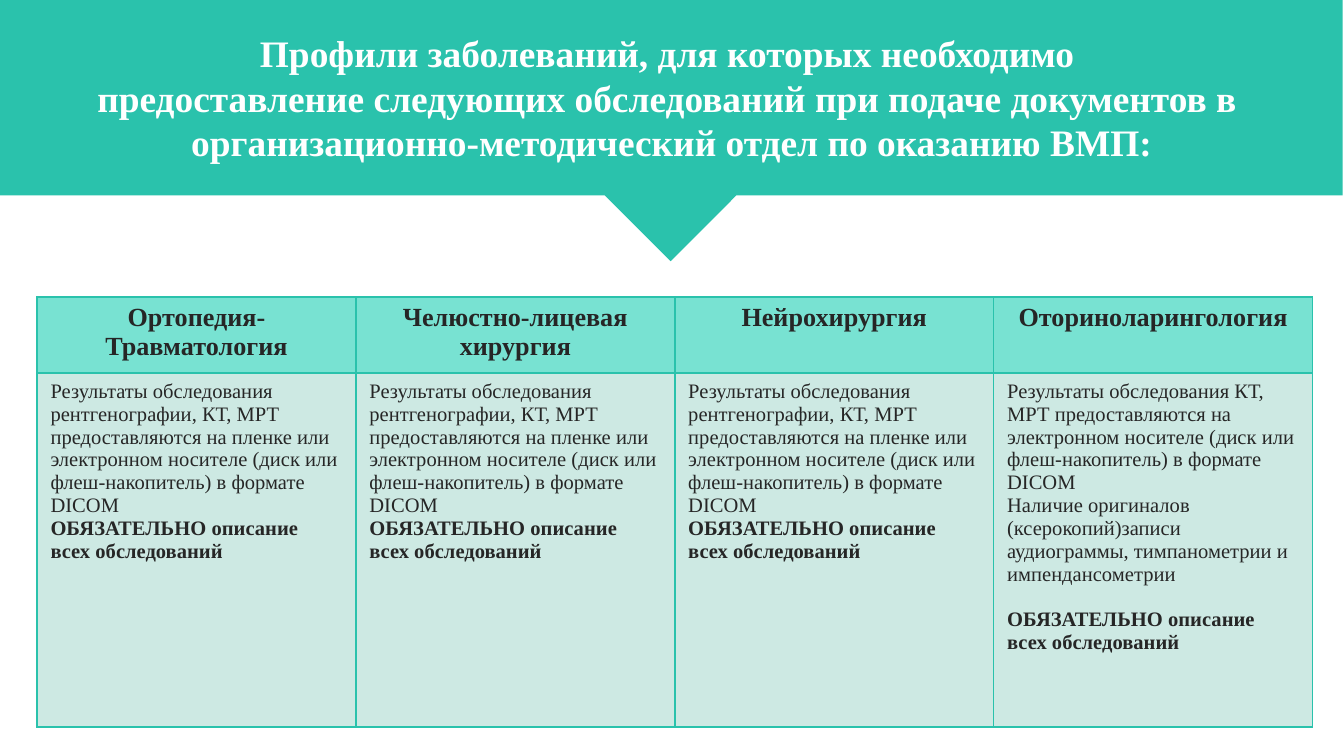
from dataclasses import dataclass
from copy import deepcopy

from lxml import etree
from pptx import Presentation
from pptx import util as u
from pptx.dml.color import RGBColor
from pptx.enum import shapes, text
from pptx.oxml.ns import qn

WIDTH = 10
HEIGHT = WIDTH * 9 / 16
FONT = "Times New Roman"
TEAL, MINT, PALE, DARK, WHITE = "2AC2AC", "78E2D2", "CDE9E3", "262626", "FFFFFF"
ROW_PERCENTS = (10.1, 46.8)

TITLE_LINES = (
    "Профили заболеваний, для которых необходимо ",
    "предоставление следующих обследований при подаче документов в ",
    "организационно-методический отдел по оказанию ВМП:",
)
IMAGING = (
    "Результаты обследования рентгенографии, КТ, МРТ предоставляются на пленке "
    "или электронном носителе (диск или флеш-накопитель) в формате DICOM"
)
ENT_IMAGING = (
    "Результаты обследования КТ, МРТ предоставляются на электронном носителе "
    "(диск или флеш-накопитель) в формате DICOM"
)
ENT_RECORDS = (
    "Наличие оригиналов (ксерокопий)записи аудиограммы, тимпанометрии "
    "и импендансометрии"
)
REQUIRED = "ОБЯЗАТЕЛЬНО описание всех обследований"


@dataclass(frozen=True)
class Profile:
    name: str
    examinations: tuple[str, ...] = (IMAGING,)
    gap: float = 0


PROFILES = (
    Profile("Ортопедия-Травматология"),
    Profile("Челюстно-лицевая хирургия"),
    Profile("Нейрохирургия"),
    Profile("Оториноларингология", (ENT_IMAGING, ENT_RECORDS), 12.2),
)


def color(value: str) -> RGBColor:
    return RGBColor.from_string(value)


def across(percent: float) -> int:
    return u.Inches(WIDTH * percent / 100)


def down(percent: float) -> int:
    return u.Inches(HEIGHT * percent / 100)


def assign(target, values: dict) -> None:
    for name, value in values.items():
        setattr(target, name, value)


def format_font(run, size: float, bold: bool, fill: str) -> None:
    assign(run.font, {"name": FONT, "size": u.Pt(size), "bold": bold})
    run.font.color.rgb = color(fill)


def draw_banner(slide):
    banner = slide.shapes.add_shape(
        shapes.MSO_SHAPE.DOWN_ARROW_CALLOUT,
        across(-0.1), down(-0.3), across(100), down(34.85),
    )
    banner.shadow.inherit = False
    banner.fill.solid()
    banner.fill.fore_color.rgb = color(TEAL)
    banner.line.fill.background()
    for index, value in enumerate((0.21, 0.25, 0.25, 0.75)):
        banner.adjustments[index] = value
    return banner


def draw_title(slide, banner) -> None:
    title = slide.shapes.title
    banner.element.addnext(title.element)
    assign(title, {"left": across(0.1), "top": down(8.75),
                   "width": across(99.8), "height": down(8.2)})
    frame = title.text_frame
    assign(frame, {"margin_left": 0, "margin_top": 0, "margin_right": 0,
                   "margin_bottom": 0, "word_wrap": False,
                   "auto_size": text.MSO_AUTO_SIZE.NONE,
                   "vertical_anchor": text.MSO_ANCHOR.MIDDLE})
    frame.text = "\v".join(TITLE_LINES)
    paragraph = frame.paragraphs[0]
    paragraph.alignment = text.PP_ALIGN.CENTER
    for run in paragraph.runs:
        format_font(run, 20, True, WHITE)
    run_format = paragraph.runs[0].font._element
    for line_break in paragraph._p.findall(qn("a:br")):
        line_break.append(deepcopy(run_format))


def format_cell(cell, fill: str) -> None:
    properties = cell._tc.get_or_add_tcPr()
    for side in ("a:lnL", "a:lnR", "a:lnT", "a:lnB"):
        border = etree.SubElement(properties, qn(side), w=str(u.Pt(1)))
        solid = etree.SubElement(border, qn("a:solidFill"))
        etree.SubElement(solid, qn("a:srgbClr"), val=TEAL)
    cell.fill.solid()
    cell.fill.fore_color.rgb = color(fill)


def write_header(cell, name: str) -> None:
    format_cell(cell, MINT)
    cell.text = name
    paragraph = cell.text_frame.paragraphs[0]
    paragraph.alignment = text.PP_ALIGN.CENTER
    format_font(paragraph.runs[0], 14, True, DARK)


def write_examinations(cell, profile: Profile) -> None:
    format_cell(cell, PALE)
    cell.text = "\n".join((*profile.examinations, REQUIRED))
    paragraphs = cell.text_frame.paragraphs
    for paragraph in paragraphs:
        run = paragraph.runs[0]
        format_font(run, 11, run.text == REQUIRED, DARK)
    if profile.gap:
        paragraphs[-1].space_before = u.Pt(profile.gap)


def draw_profiles(slide) -> None:
    table = slide.shapes.add_table(
        len(ROW_PERCENTS), len(PROFILES),
        across(2.76), down(39.27), across(94.9), down(sum(ROW_PERCENTS)),
    ).table
    for row, percent in zip(table.rows, ROW_PERCENTS):
        row.height = down(percent)
    for column, profile in enumerate(PROFILES):
        write_header(table.cell(0, column), profile.name)
        write_examinations(table.cell(1, column), profile)


def main() -> None:
    presentation = Presentation()
    assign(presentation, {"slide_width": across(100), "slide_height": down(100)})
    slide = presentation.slides.add_slide(presentation.slide_layouts[5])
    banner = draw_banner(slide)
    draw_title(slide, banner)
    draw_profiles(slide)
    presentation.save("out.pptx")


if __name__ == "__main__":
    main()
